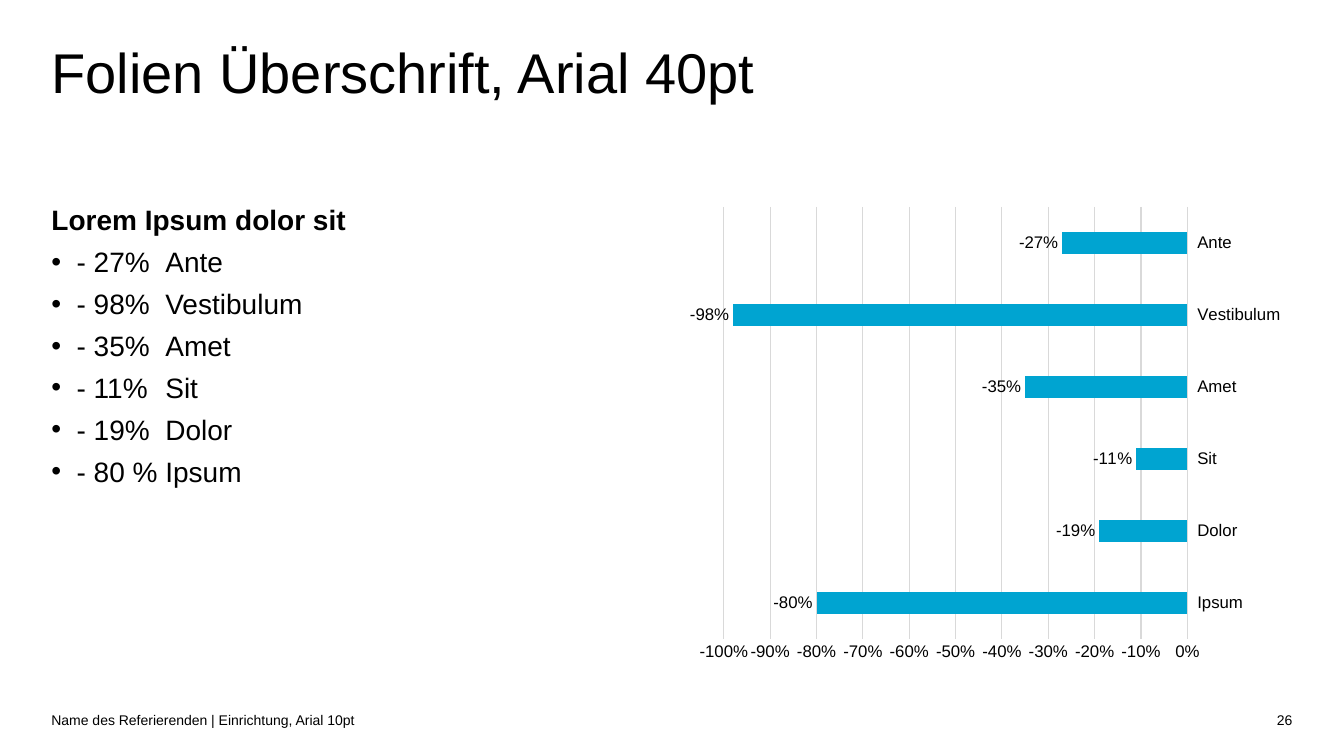
"""Build a slide with a bullet list beside a bar chart of negative percentages."""
import pptx
import pptx.chart.data
import pptx.dml.color
import pptx.enum.chart
import pptx.enum.text
import pptx.oxml
import pptx.oxml.ns
import pptx.util

THEME = {
    "font": "Arial",
    "text": pptx.dml.color.RGBColor.from_string("000000"),
    "bar": pptx.dml.color.RGBColor.from_string("00A4D1"),
    "grid": pptx.dml.color.RGBColor.from_string("D9D9D9"),
    "title_size": 40,
    "body_size": 20,
    "axis_size": 12,
    "footer_size": 10,
}
REDUCTIONS = [
    ("- 27%", "Ante", -0.27),
    ("- 98%", "Vestibulum", -0.98),
    ("- 35%", "Amet", -0.35),
    ("- 11%", "Sit", -0.11),
    ("- 19%", "Dolor", -0.19),
    ("- 80 %", "Ipsum", -0.8),
]

presentation = pptx.Presentation()
presentation.slide_width = pptx.util.Inches(13.33)
presentation.slide_height = pptx.util.Inches(7.5)
slide = presentation.slides.add_slide(presentation.slide_layouts[1])

MARGIN = pptx.util.Inches(0.51)
COLUMN = (presentation.slide_width - 2 * MARGIN) // 8
GUTTER = COLUMN // 5
HALF = 4 * COLUMN - GUTTER // 2
TITLE_TOP = pptx.util.Inches(0.37)
CONTENT_TOP = pptx.util.Inches(1.96)
CONTENT_HEIGHT = pptx.util.Inches(4.69)
FOOTER_TOP = pptx.util.Inches(6.99)


def style_font(font, size, bold=False):
    formats = {"name": THEME["font"], "size": pptx.util.Pt(size), "bold": bold}
    for name, value in formats.items():
        setattr(font, name, value)
    font.color.rgb = THEME["text"]


def place_text(shape, position, anchor):
    for name, value in zip(("left", "top", "width", "height"), position):
        setattr(shape, name, value)
    frame = shape.text_frame
    formats = {
        "margin_left": 0, "margin_top": 0, "margin_right": 0, "margin_bottom": 0,
        "word_wrap": True, "vertical_anchor": anchor,
        "auto_size": pptx.enum.text.MSO_AUTO_SIZE.NONE,
    }
    for name, value in formats.items():
        setattr(frame, name, value)
    return frame


LEFT, RIGHT = pptx.enum.text.PP_ALIGN.LEFT, pptx.enum.text.PP_ALIGN.RIGHT
TOP, MIDDLE = pptx.enum.text.MSO_ANCHOR.TOP, pptx.enum.text.MSO_ANCHOR.MIDDLE

title = place_text(slide.shapes.title, (MARGIN, TITLE_TOP, 8 * COLUMN, COLUMN), TOP)
title.text = "Folien Überschrift, Arial 40pt"
title.paragraphs[0].alignment = LEFT
style_font(title.paragraphs[0].runs[0].font, THEME["title_size"])

body = place_text(slide.placeholders[1], (MARGIN, CONTENT_TOP, HALF, CONTENT_HEIGHT), TOP)
body.margin_top = pptx.util.Inches(0.04)
lines = ["Lorem Ipsum dolor sit"] + [f"{share}\t{name}" for share, name, _ in REDUCTIONS]
body.text = "\n".join(lines)
for index, paragraph in enumerate(body.paragraphs):
    is_bullet = index > 0
    paragraph.level = int(is_bullet)
    paragraph.line_spacing = 1.04
    paragraph.space_before = pptx.util.Pt(5 if is_bullet else 0)
    properties = paragraph._p.get_or_add_pPr()
    indent = pptx.util.Inches(0.25) if is_bullet else 0
    properties.set("marL", str(indent))
    properties.set("indent", str(-indent))
    namespace = pptx.oxml.ns.nsdecls("a")
    if is_bullet:
        elements = [
            f'<a:buFont {namespace} typeface="{THEME["font"]}"/>',
            f'<a:buChar {namespace} char="•"/>',
            f'<a:tabLst {namespace}><a:tab pos="{pptx.util.Inches(1.13)}" algn="l"/></a:tabLst>',
        ]
    else:
        elements = [f"<a:buNone {namespace}/>"]
    for element in elements:
        properties.append(pptx.oxml.parse_xml(element))
    style_font(paragraph.runs[0].font, THEME["body_size"], bold=not is_bullet)

footers = [
    ("Name des Referierenden | Einrichtung, Arial 10pt", 0, 7, LEFT),
    ("26", 7, 1, RIGHT),
]
for text, start, span, alignment in footers:
    position = (MARGIN + start * COLUMN, FOOTER_TOP, span * COLUMN, GUTTER)
    footer = place_text(slide.shapes.add_textbox(*position), position, MIDDLE)
    footer.text = text
    footer.paragraphs[0].alignment = alignment
    style_font(footer.paragraphs[0].runs[0].font, THEME["footer_size"])

chart_data = pptx.chart.data.CategoryChartData(number_format="0%")
chart_data.categories = [name for _, name, _ in reversed(REDUCTIONS)]
chart_data.add_series("Series 1", [value for _, _, value in reversed(REDUCTIONS)])
chart = slide.shapes.add_chart(
    pptx.enum.chart.XL_CHART_TYPE.BAR_CLUSTERED,
    MARGIN + HALF + GUTTER, CONTENT_TOP, HALF, CONTENT_HEIGHT, chart_data,
).chart
chart.has_legend = False
chart.has_title = False
style_font(chart.font, THEME["footer_size"])

for axis in (chart.category_axis, chart.value_axis):
    axis.major_tick_mark = pptx.enum.chart.XL_TICK_MARK.NONE
    axis.minor_tick_mark = pptx.enum.chart.XL_TICK_MARK.NONE
    style_font(axis.tick_labels.font, THEME["axis_size"])
chart.category_axis.tick_label_position = pptx.enum.chart.XL_TICK_LABEL_POSITION.HIGH

value_axis = chart.value_axis
value_formats = {"minimum_scale": -1, "maximum_scale": 0, "major_unit": 0.1,
                 "has_major_gridlines": True}
for name, value in value_formats.items():
    setattr(value_axis, name, value)
value_axis.tick_labels.number_format = "0%"
value_axis.tick_labels.number_format_is_linked = False
value_axis.format.line.fill.background()
for line in (chart.category_axis.format.line, value_axis.major_gridlines.format.line):
    line.color.rgb = THEME["grid"]
    line.width = pptx.util.Pt(0.75)

plot = chart.plots[0]
plot.gap_width = 219
plot.vary_by_categories = False
series = plot.series[0]
series.invert_if_negative = False
series.format.fill.solid()
series.format.fill.fore_color.rgb = THEME["bar"]
label_formats = {
    "show_value": True, "number_format": "0%", "number_format_is_linked": False,
    "position": pptx.enum.chart.XL_LABEL_POSITION.OUTSIDE_END,
}
for name, value in label_formats.items():
    setattr(series.data_labels, name, value)
style_font(series.data_labels.font, THEME["axis_size"])

presentation.save("out.pptx")
